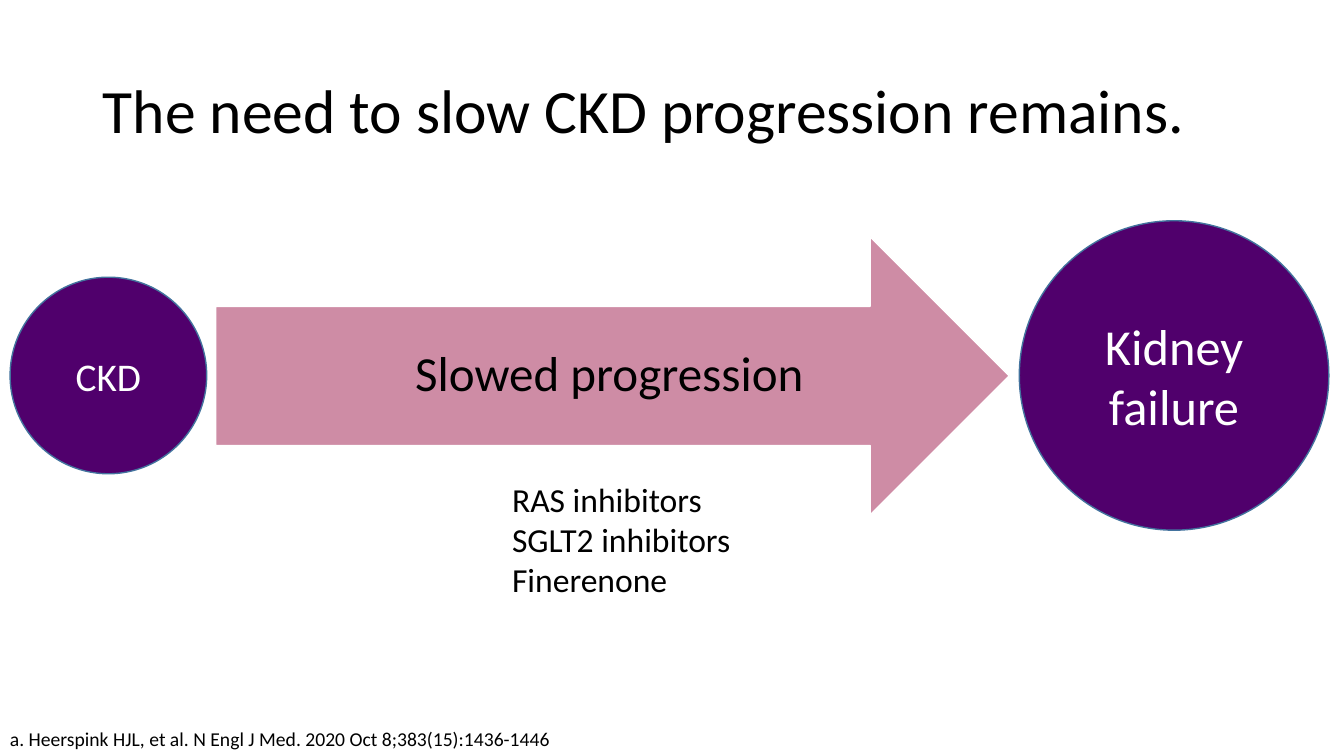
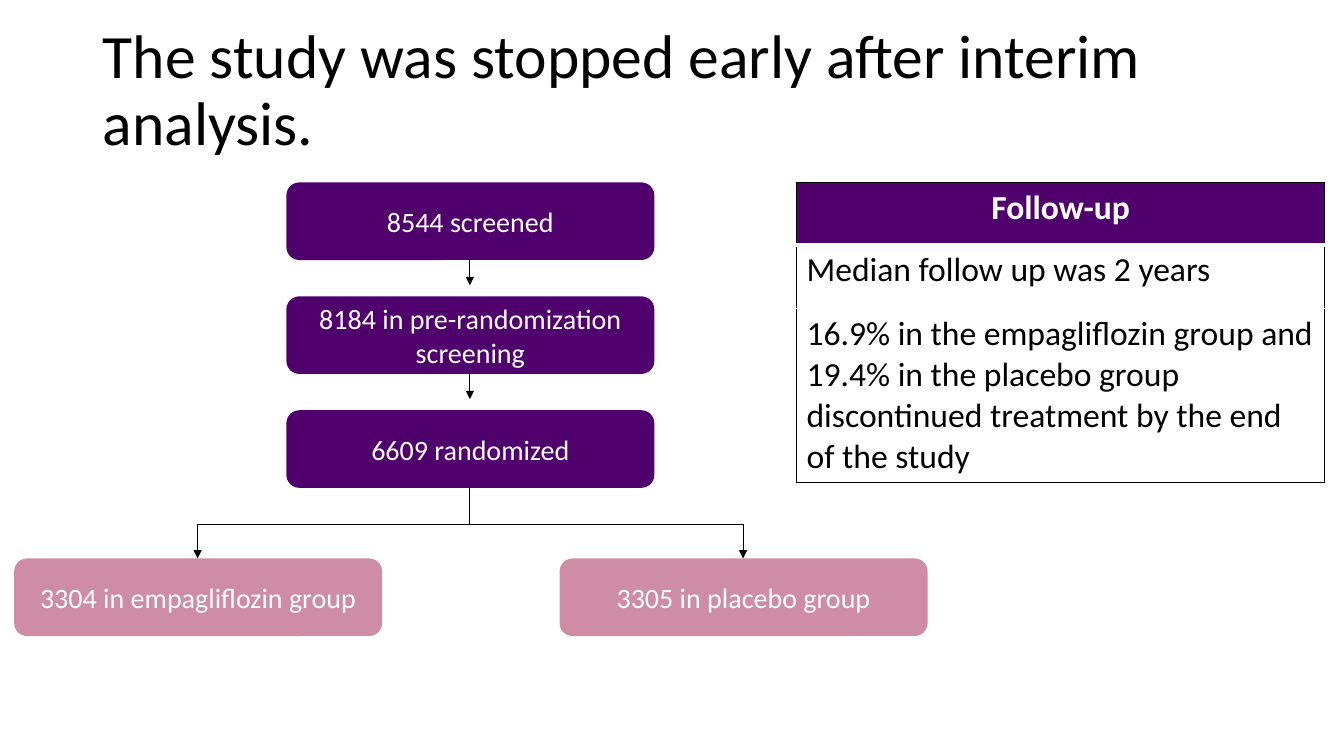
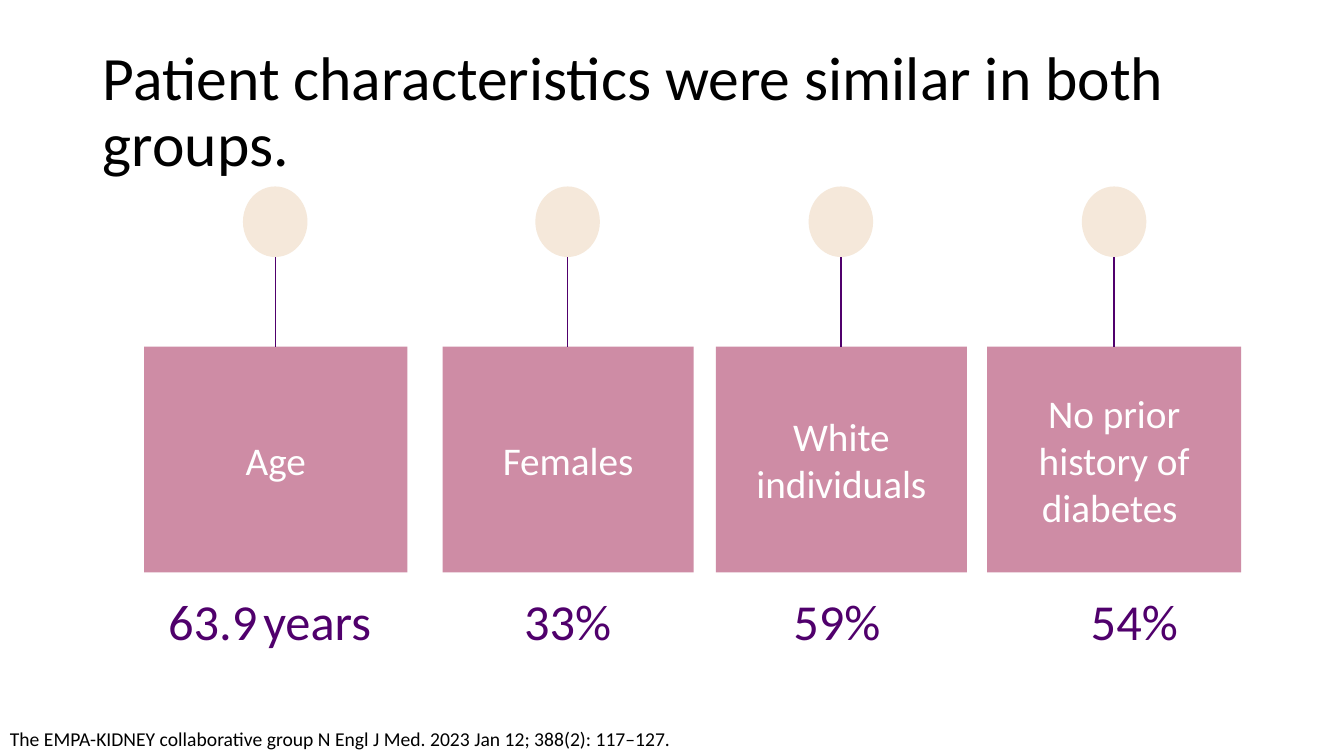
import pptx
import pptx.util
import pptx.dml.color
import pptx.enum.shapes
import pptx.enum.text
import pptx.oxml
import pptx.oxml.ns
from lxml import etree

RGBColor = pptx.dml.color.RGBColor
SHAPE = pptx.enum.shapes.MSO_SHAPE
ALIGN = pptx.enum.text.PP_ALIGN
ANCHOR = pptx.enum.text.MSO_ANCHOR
AUTOSIZE = pptx.enum.text.MSO_AUTO_SIZE
qn = pptx.oxml.ns.qn

# Colours
PURPLE = RGBColor(0x50, 0x00, 0x6C)
PINK = RGBColor(0xCE, 0x8C, 0xA5)
CREAM = RGBColor(0xF5, 0xE8, 0xDA)
BLUE = RGBColor(0x43, 0x73, 0x9E)
BLACK = RGBColor(0, 0, 0)
WHITE = RGBColor(255, 255, 255)

# Scale: 100 px to the inch
EMU_PER_PX = 9144
FONT = "Calibri"


def px(*lengths):
    return [length * EMU_PER_PX for length in lengths]


def set_all(target, values):
    for name, value in values.items():
        setattr(target, name, value)


class Deck:
    """Holds the shared style and the slide being built."""

    def __init__(self):
        self.prs = pptx.Presentation()
        width, height = px(1333, 750)
        set_all(self.prs, {"slide_width": width, "slide_height": height})
        self.slide = None

    def fill_text(self, frame, paragraphs, size, color, align=ALIGN.LEFT,
                  spacing=None, bold=False):
        """Each paragraph is a string or a list of (text, size) runs."""
        for index, content in enumerate(paragraphs):
            paragraph = frame.add_paragraph() if index else frame.paragraphs[0]
            set_all(paragraph, {"alignment": align, "line_spacing": spacing})
            runs = [(content, size)] if isinstance(content, str) else content
            for words, points in runs:
                run = paragraph.add_run()
                run.text = words
                set_all(run.font, {"name": FONT, "bold": bold,
                                   "size": pptx.util.Pt(points)})
                run.font.color.rgb = color

    def new_slide(self, title, top=40):
        self.slide = self.prs.slides.add_slide(self.prs.slide_layouts[5])
        heading = self.slide.shapes.title
        sides = ("left", "top", "width", "height")
        set_all(heading, dict(zip(sides, px(92, top, 1150, 145))))
        set_all(heading.text_frame, {"vertical_anchor": ANCHOR.MIDDLE,
                                     "word_wrap": True,
                                     "auto_size": AUTOSIZE.NONE})
        self.fill_text(heading.text_frame, [title], 44, BLACK, spacing=0.9)

    def shape(self, kind, box, fill, label=None, size=20, line=None):
        figure = self.slide.shapes.add_shape(kind, *px(*box))
        figure.shadow.inherit = False
        figure.fill.solid()
        figure.fill.fore_color.rgb = fill
        if line is None:
            figure.line.fill.background()
        else:
            figure.line.color.rgb = line
            figure.line.width = pptx.util.Pt(1)
        if label:
            figure.text_frame.vertical_anchor = ANCHOR.MIDDLE
            self.fill_text(figure.text_frame, [label], size, WHITE,
                           ALIGN.CENTER)

    def text(self, box, paragraphs, size, color=BLACK, align=ALIGN.LEFT,
             spacing=None, anchor=ANCHOR.TOP, wrap=False):
        frame = self.slide.shapes.add_textbox(*px(*box)).text_frame
        grow = AUTOSIZE.NONE if wrap else AUTOSIZE.SHAPE_TO_FIT_TEXT
        set_all(frame, {"word_wrap": wrap, "vertical_anchor": anchor,
                        "auto_size": grow})
        self.fill_text(frame, paragraphs, size, color, align, spacing)

    def citation(self, words, width):
        self.text((0, 716, width, 34), [words], 14)

    def line(self, start, end, color=BLACK, weight=0.5, arrow=False):
        straight = pptx.enum.shapes.MSO_CONNECTOR.STRAIGHT
        link = self.slide.shapes.add_connector(straight, *px(*start, *end))
        link.line.color.rgb = color
        link.line.width = pptx.util.Pt(weight)
        properties = link._element.spPr
        if arrow:
            etree.SubElement(properties.find(qn("a:ln")), qn("a:tailEnd"),
                             type="triangle")
        etree.SubElement(properties, qn("a:effectLst"))

    def border(self, cell, side, color, weight):
        edge = etree.SubElement(cell._tc.get_or_add_tcPr(), qn("a:ln" + side),
                                w=str(pptx.util.Pt(weight)))
        fill = etree.SubElement(edge, qn("a:solidFill"))
        etree.SubElement(fill, qn("a:srgbClr"), val=str(color))

    def table(self, box, rows):
        """One column; each row is (text, height, top and bottom borders)."""
        grid = self.slide.shapes.add_table(len(rows), 1, *px(*box)).table
        grid.horz_banding = False
        for index, (words, height, top, bottom) in enumerate(rows):
            grid.rows[index].height = px(height)[0]
            cell = grid.cell(index, 0)
            edges = {"L": (BLACK, 1), "R": (BLACK, 1), "T": top, "B": bottom}
            for side, (color, weight) in edges.items():
                self.border(cell, side, color, weight)
            if index == 0:
                cell.fill.solid()
                cell.fill.fore_color.rgb = PURPLE
                self.fill_text(cell.text_frame, [words], 24, WHITE,
                               ALIGN.CENTER, bold=True)
            else:
                cell.fill.background()
                self.fill_text(cell.text_frame, [words], 24, BLACK)


def progression_slide(deck):
    deck.new_slide("The need to slow CKD progression remains.")
    # Path from disease to failure
    deck.shape(SHAPE.RIGHT_ARROW, (214, 235, 787, 276), PINK, line=WHITE)
    deck.text((277, 304, 655, 138), ["Slowed progression"], 35,
              align=ALIGN.CENTER, spacing=0.9, anchor=ANCHOR.MIDDLE, wrap=True)
    deck.shape(SHAPE.FLOWCHART_CONNECTOR, (10, 275, 195, 195), PURPLE,
               "CKD", 28, BLUE)
    deck.shape(SHAPE.FLOWCHART_CONNECTOR, (1011, 219, 307, 307), PURPLE,
               "Kidney failure", 36, BLUE)
    # Treatments
    deck.text((498, 470, 239, 131),
              ["RAS inhibitors", "SGLT2 inhibitors", "Finerenone"], 24)
    deck.citation("a. Heerspink HJL, et al. N Engl J Med. "
                  "2020 Oct 8;383(15):1436-1446", 558)


def enrolment_slide(deck):
    deck.new_slide("The study was stopped early after interim analysis.", 19)
    box_width, box_height = 365, 77
    trunk, first_top, step = 466, 181, 113
    fork, group_top = 520, 554

    # Screening steps
    stages = ["8544 screened", "8184 in pre-randomization screening",
              "6609 randomized"]
    for index, stage in enumerate(stages):
        top = first_top + index * step
        bottom = top + box_height
        deck.shape(SHAPE.ROUNDED_RECTANGLE,
                   (trunk - box_width // 2, top, box_width, box_height),
                   PURPLE, stage)
        last = index == len(stages) - 1
        deck.line((trunk, bottom), (trunk, fork if last else bottom + 25),
                  arrow=not last)

    # Treatment groups
    groups = {196: "3304 in empagliflozin group", 737: "3305 in placebo group"}
    deck.line((min(groups), fork), (max(groups), fork))
    for center, group in groups.items():
        deck.shape(SHAPE.ROUNDED_RECTANGLE,
                   (center - box_width // 2, group_top, box_width, box_height),
                   PINK, group)
        deck.line((center, fork), (center, group_top), arrow=True)

    # Follow-up table
    thin_white, thin_black = (WHITE, 1), (BLACK, 1)
    deck.table((790, 181, 524, 298), [
        ("Follow-up", 62, thin_black, (WHITE, 3)),
        ("Median follow up was 2 years", 63, thin_white, thin_white),
        ("16.9% in the empagliflozin group and 19.4% in the placebo group "
         "discontinued treatment by the end of the study",
         173, thin_white, thin_black),
    ])


def characteristics_slide(deck):
    deck.new_slide("Patient characteristics were similar in both groups.")
    card_top, card_height = 344, 224
    dot_top, dot_width, dot_height = 185, 64, 70
    # Label, card left and width, figure, figure left and width
    traits = [
        ("Age", 143, 261, [("63.9", 36), (" ", 18), ("years", 36)], 157, 223),
        ("Females", 439, 249, "33%", 510, 107),
        ("White individuals", 710, 249, "59%", 777, 107),
        ("No prior history of diabetes ", 979, 252, "54%", 1072, 107),
    ]
    for label, left, width, figure, figure_left, figure_width in traits:
        center = left + width // 2
        deck.shape(SHAPE.RECTANGLE, (left, card_top, width, card_height),
                   PINK, label, 28)
        deck.shape(SHAPE.FLOWCHART_CONNECTOR,
                   (center - dot_width // 2, dot_top, dot_width, dot_height),
                   CREAM)
        deck.line((center, dot_top + dot_height), (center, card_top),
                  PURPLE, 1)
        deck.text((figure_left, 580, figure_width, 71), [figure], 36, PURPLE)
    deck.citation("The EMPA-KIDNEY collaborative group N Engl J Med. "
                  "2023 Jan 12; 388(2): 117–127.", 686)


def main():
    deck = Deck()
    progression_slide(deck)
    enrolment_slide(deck)
    characteristics_slide(deck)
    deck.prs.save("out.pptx")


if __name__ == "__main__":
    main()
